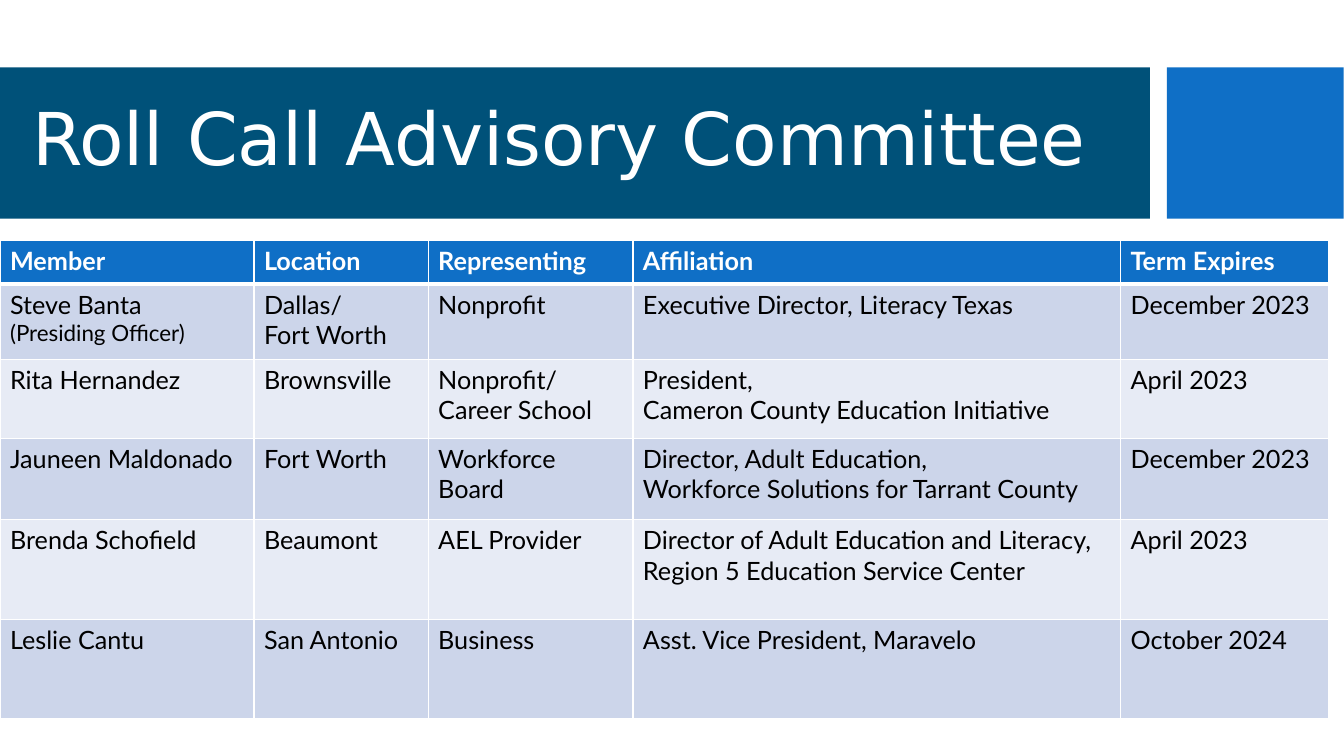
from dataclasses import dataclass

from lxml.etree import SubElement
from pptx import Presentation
from pptx.dml.color import RGBColor
from pptx.enum.shapes import MSO_SHAPE as Shape
from pptx.enum.text import MSO_ANCHOR as Anchor
from pptx.oxml.ns import qn
from pptx.util import Cm, Pt

WHITE = RGBColor(0xFF, 0xFF, 0xFF)
BLACK = RGBColor(0x00, 0x00, 0x00)
NAVY = RGBColor(0x00, 0x51, 0x79)
BLUE = RGBColor(0x0F, 0x6F, 0xC6)
BAND_DARK = RGBColor(0xCC, 0xD5, 0xEA)
BAND_LIGHT = RGBColor(0xE7, 0xEB, 0xF5)

TITLE_FONT = "DejaVu Sans"
TABLE_FONT = "Lato"
BAND_TOP, BAND_HEIGHT = 1.7, 3.81


@dataclass(frozen=True)
class Bar:
    left: float
    width: float
    color: RGBColor


@dataclass(frozen=True)
class Member:
    name: str
    location: str
    representing: str
    affiliation: str
    term: str
    height: float
    note: str = ""

    def texts(self) -> tuple[str, ...]:
        return (self.name, self.location, self.representing, self.affiliation, self.term)


BARS = (Bar(0, 28.98, NAVY), Bar(29.41, 4.45, BLUE))
COLUMNS = {
    "Member": 6.4,
    "Location": 4.39,
    "Representing": 5.16,
    "Affiliation": 12.29,
    "Term Expires": 5.23,
}
HEADER_HEIGHT = 1.09
MEMBERS = (
    Member("Steve Banta", "Dallas/\nFort Worth", "Nonprofit",
           "Executive Director, Literacy Texas", "December 2023", 1.9,
           note="(Presiding Officer)"),
    Member("Rita Hernandez", "Brownsville", "Nonprofit/\nCareer School",
           "President,\nCameron County Education Initiative", "April 2023", 1.98),
    Member("Jauneen Maldonado", "Fort Worth", "Workforce Board",
           "Director, Adult Education,\nWorkforce Solutions for Tarrant County",
           "December 2023", 2.06),
    Member("Brenda Schofield", "Beaumont", "AEL Provider",
           "Director of Adult Education and Literacy,\nRegion 5 Education Service Center",
           "April 2023", 2.51),
    Member("Leslie Cantu", "San Antonio", "Business",
           "Asst. Vice President, Maravelo", "October 2024", 2.51),
)


def write(para, text: str, *, size: float = 18, font: str = TABLE_FONT,
          color: RGBColor = BLACK, bold: bool = False) -> None:
    """Append text to a paragraph, turning newlines into line breaks."""
    for index, line in enumerate(text.split("\n")):
        if index:
            para.add_line_break()
        if line:
            span = para.add_run()
            span.text = line
            span.font.size = Pt(size)
            span.font.name = font
            span.font.color.rgb = color
            span.font.bold = bold


def add_bar(page, bar: Bar) -> None:
    shape = page.shapes.add_shape(Shape.RECTANGLE, Cm(bar.left), Cm(BAND_TOP),
                                  Cm(bar.width), Cm(BAND_HEIGHT))
    shape.shadow.inherit = False
    shape.fill.solid()
    shape.fill.fore_color.rgb = bar.color
    shape.line.fill.background()


def add_title(page, text: str) -> None:
    box = page.shapes.add_textbox(Cm(0.56), Cm(2.08), Cm(28.04), Cm(3))
    frame = box.text_frame
    frame.word_wrap = True
    frame.vertical_anchor = Anchor.MIDDLE
    para = frame.paragraphs[0]
    para.line_spacing = 0.9
    write(para, text, size=52, font=TITLE_FONT, color=WHITE)


def style_cell(cell, fill: RGBColor, *, top: float = 1, bottom: float = 1) -> None:
    """Fill a cell and give it white borders, with widths in points."""
    properties = cell._tc.get_or_add_tcPr()
    for side, width in (("L", 1), ("R", 1), ("T", top), ("B", bottom)):
        border = SubElement(properties, qn(f"a:ln{side}"), w=str(Pt(width)))
        solid = SubElement(border, qn("a:solidFill"))
        SubElement(solid, qn("a:srgbClr"), val=str(WHITE))
    cell.fill.solid()
    cell.fill.fore_color.rgb = fill


def add_member_table(page) -> None:
    heights = [HEADER_HEIGHT] + [member.height for member in MEMBERS]
    frame = page.shapes.add_table(len(heights), len(COLUMNS), Cm(0), Cm(6.07),
                                  Cm(sum(COLUMNS.values())), Cm(sum(heights)))
    table = frame.table
    for row, height in zip(table.rows, heights):
        row.height = Cm(height)
    for index, (heading, width) in enumerate(COLUMNS.items()):
        table.columns[index].width = Cm(width)
        cell = table.cell(0, index)
        style_cell(cell, BLUE, bottom=3)
        write(cell.text_frame.paragraphs[0], heading, color=WHITE, bold=True)

    for number, member in enumerate(MEMBERS, start=1):
        band = BAND_DARK if number % 2 else BAND_LIGHT
        for index, text in enumerate(member.texts()):
            cell = table.cell(number, index)
            style_cell(cell, band, top=3 if number == 1 else 1)
            write(cell.text_frame.paragraphs[0], text)
        if member.note:
            write(table.cell(number, 0).text_frame.paragraphs[0],
                  "\n" + member.note, size=16)


def main() -> None:
    deck = Presentation()
    deck.slide_width, deck.slide_height = Cm(33.87), Cm(19.05)
    page = deck.slides.add_slide(deck.slide_layouts[6])
    for bar in BARS:
        add_bar(page, bar)
    add_title(page, "Roll Call Advisory Committee")
    add_member_table(page)
    deck.save("out.pptx")


if __name__ == "__main__":
    main()
